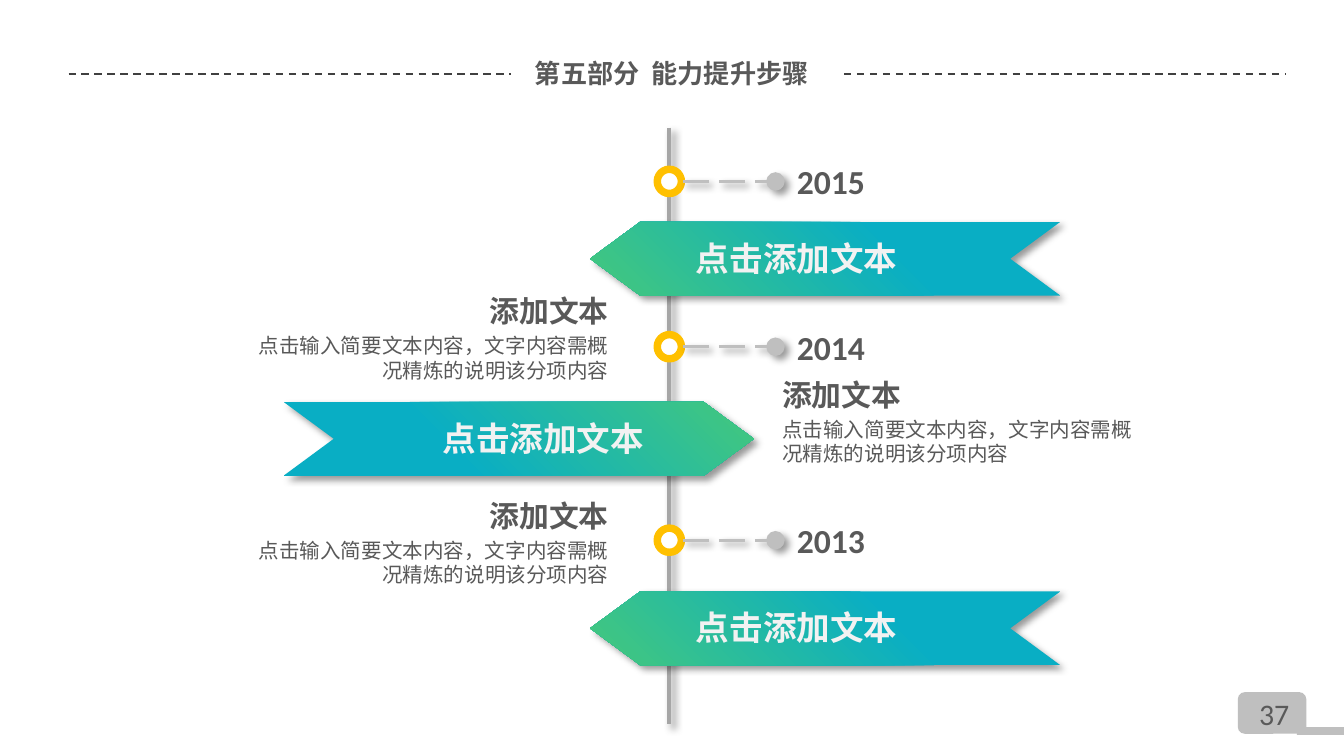
"""Builds the ability improvement timeline slide."""
from collections import namedtuple

from lxml.etree import SubElement
from pptx import Presentation
from pptx.dml.color import RGBColor
from pptx.enum.dml import MSO_LINE
from pptx.enum.shapes import MSO_CONNECTOR, MSO_SHAPE
from pptx.enum.text import MSO_ANCHOR, PP_ALIGN
from pptx.oxml.ns import qn
from pptx.util import Inches, Pt

TITLE = "第五部分  能力提升步骤"
PAGE_NUMBER = "37"
BANNER_LABEL = "点击添加文本"
HEADING = "添加文本"
DETAIL = "点击输入简要文本内容，文字内容需概况精炼的说明该分项内容"

Step = namedtuple("Step", "year marker_y banner_y banner_side caption_y")
STEPS = [
    Step("2015", 1.35, 1.65, "right", 2.14),
    Step("2014", 2.58, 2.99, "left", 2.76),
    Step("2013", 4.02, 4.40, "right", 3.66),
]

Side = namedtuple("Side", "banner_x label_x rotation label_align caption_x caption_align")
SIDES = {
    "right": Side(4.39, 5.08, 180, PP_ALIGN.LEFT, 1.79, PP_ALIGN.RIGHT),
    "left": Side(2.11, 3.17, 0, PP_ALIGN.RIGHT, 5.75, PP_ALIGN.LEFT),
}

THEME = {
    "latin": "Calibri", "cjk": "Noto Sans CJK SC",
    "text": "595959", "label": "F2F2F2", "rule": "404040", "axis": "A6A6A6",
    "grey": "BFBFBF", "ring": "FFC000", "hole": "FFFFFF", "shadow": "000000",
    "gradient": [(0.35, "09AEC4"), (1, "45C87C")],
    "title_size": 14, "label_size": 18, "year_size": 18,
    "heading_size": 16, "detail_size": 11, "page_size": 16,
}

SLIDE_W = 10
SLIDE_H = SLIDE_W * 9 / 16
AXIS_X = 4.98
RING = 0.18
BANNER_W, BANNER_H = 3.5, 0.55
CAPTION_W, HEADING_W = 2.81, 1.05
TIGHT = (0.07, 0.04)
ROOMY = (0.1, 0.05)


def color(key):
    return RGBColor.from_string(THEME[key])


def cast_shadow(effects):
    outer = SubElement(effects, qn("a:outerShdw"), blurRad=str(Pt(4)), dist=str(Pt(3)),
                       dir=str(45 * 60000), algn="tl", rotWithShape="0")
    tint = SubElement(outer, qn("a:srgbClr"), val=THEME["shadow"])
    SubElement(tint, qn("a:alpha"), val="40000")


def add_line(slide, start, end, ink, width, dash=None, dot=False, shadow=False):
    line = slide.shapes.add_connector(MSO_CONNECTOR.STRAIGHT, *map(Inches, start + end))
    line.line.color.rgb = color(ink)
    line.line.width = Pt(width)
    if dash:
        line.line.dash_style = dash
    properties = line._element.spPr
    if dot:
        SubElement(properties.find(qn("a:ln")), qn("a:tailEnd"), type="oval", w="lg", len="lg")
    effects = SubElement(properties, qn("a:effectLst"))
    if shadow:
        cast_shadow(effects)


def add_block(slide, kind, box, ink=None):
    block = slide.shapes.add_shape(kind, *map(Inches, box))
    if ink:
        block.fill.solid()
        block.fill.fore_color.rgb = color(ink)
    block.line.fill.background()
    block.shadow.inherit = False
    return block


def add_text(slide, box, text, size, ink="text", face="cjk", bold=True,
             align=PP_ALIGN.LEFT, wrap=False, inset=TIGHT, anchor=MSO_ANCHOR.TOP):
    frame = slide.shapes.add_textbox(*map(Inches, box)).text_frame
    frame.word_wrap = wrap
    frame.vertical_anchor = anchor
    frame.margin_left = frame.margin_right = Inches(inset[0])
    frame.margin_top = frame.margin_bottom = Inches(inset[1])
    frame.text = text
    paragraph = frame.paragraphs[0]
    paragraph.alignment = align
    run = paragraph.runs[0]
    run.font.size = Pt(THEME[size])
    run.font.bold = bold
    run.font.color.rgb = color(ink)
    run.font.name = THEME[face]
    SubElement(run._r.get_or_add_rPr(), qn("a:ea"), typeface=THEME[face])


def add_frame(slide):
    add_block(slide, MSO_SHAPE.ROUNDED_RECTANGLE, (9.21, 5.15, 0.51, 0.31), "grey")
    add_block(slide, MSO_SHAPE.RECTANGLE, (9.65, 5.41, 0.35, 0.06), "grey")
    add_text(slide, (9.27, 5.13, 0.48, 0.37), PAGE_NUMBER, "page_size",
             face="latin", bold=False, inset=ROOMY)
    for left in (0.51, 6.28):
        add_line(slide, (left, 0.55), (left + 3.29, 0.55), "rule", 1, MSO_LINE.DASH)
    add_text(slide, (0.12, 0.35, 9.76, 0.38), TITLE, "title_size", align=PP_ALIGN.CENTER,
             wrap=True, inset=ROOMY, anchor=MSO_ANCHOR.MIDDLE)


def add_marker(slide, step):
    y = step.marker_y
    ring = add_block(slide, MSO_SHAPE.OVAL, (AXIS_X - RING / 2, y - RING / 2, RING, RING), "hole")
    ring.line.color.rgb = color("ring")
    ring.line.width = Pt(4)
    add_line(slide, (AXIS_X + 0.1, y), (AXIS_X + 0.79, y), "grey", 1.75,
             MSO_LINE.LONG_DASH, dot=True, shadow=True)
    add_text(slide, (5.86, y - 0.19, 0.66, 0.38), step.year, "year_size", face="latin")


def add_banner(slide, step, side):
    banner = add_block(slide, MSO_SHAPE.CHEVRON,
                       (side.banner_x, step.banner_y, BANNER_W, BANNER_H))
    banner.adjustments[0] = 0.68
    banner.rotation = side.rotation
    banner.fill.gradient()
    banner.fill.gradient_angle = 45
    for stop, (position, shade) in zip(banner.fill.gradient_stops, THEME["gradient"]):
        stop.position = position
        stop.color.rgb = RGBColor.from_string(shade)
    cast_shadow(banner._element.spPr.find(qn("a:effectLst")))
    add_text(slide, (side.label_x, step.banner_y + 0.07, 1.72, 0.4), BANNER_LABEL,
             "label_size", ink="label", align=side.label_align, inset=ROOMY)


def add_caption(slide, step, side):
    align = side.caption_align
    indent = CAPTION_W - HEADING_W if align == PP_ALIGN.RIGHT else 0
    add_text(slide, (side.caption_x, step.caption_y + 0.3, CAPTION_W, 0.45), DETAIL,
             "detail_size", bold=False, align=align, wrap=True)
    add_text(slide, (side.caption_x + indent, step.caption_y, HEADING_W, 0.35), HEADING,
             "heading_size", align=align)


def main():
    deck = Presentation()
    deck.slide_width, deck.slide_height = Inches(SLIDE_W), Inches(SLIDE_H)
    slide = deck.slides.add_slide(deck.slide_layouts[6])
    add_frame(slide)
    add_line(slide, (AXIS_X, 0.95), (AXIS_X, 5.39), "axis", 2, shadow=True)
    for step in STEPS:
        side = SIDES[step.banner_side]
        add_marker(slide, step)
        add_banner(slide, step, side)
        add_caption(slide, step, side)
    deck.save("out.pptx")


if __name__ == "__main__":
    main()
